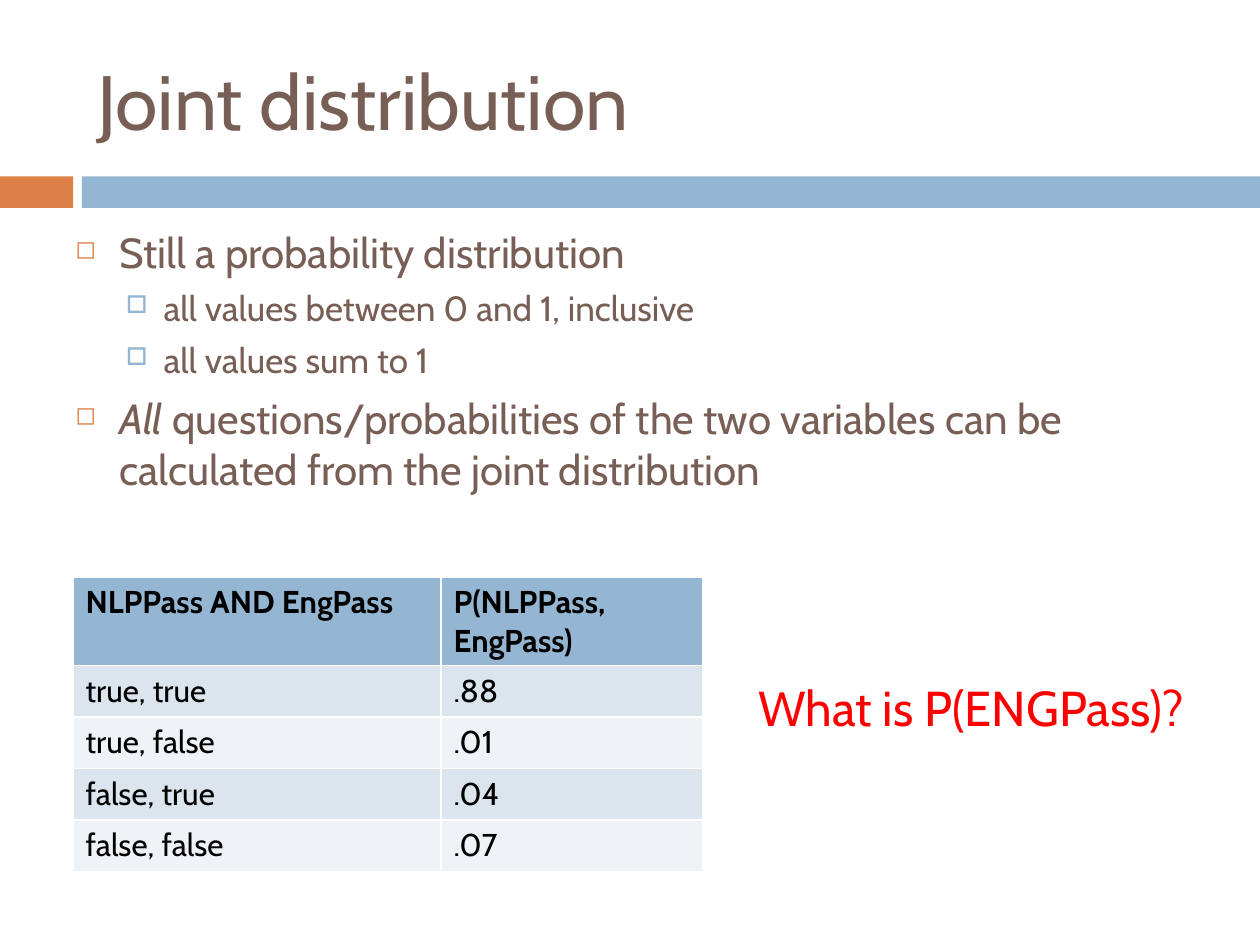
from lxml.etree import SubElement as Sub
from pptx import Presentation
from pptx.dml.color import RGBColor as RGB
from pptx.enum.shapes import MSO_SHAPE as Kind
from pptx.enum.text import MSO_ANCHOR as Anchor, PP_ALIGN as Align
from pptx.oxml.ns import qn
from pptx.util import Inches, Pt

HUE = {"brown": "775F55", "orange": "DD8047", "blue": "94B6D2", "red": "FF0000",
       "black": "000000", "dark": "DCE5EE", "light": "EEF3F7"}
FONT = "Cabin"
BAR = {"top": 1.4, "tall": 0.25}
# Per list level: text size, indent, hang, space before, bullet, its colour and size
LEVELS = [
    (24, 0.35, 0.35, 7, "◻", "orange", 60),
    (20, 0.7, 0.3, 5.5, "□", "blue", 70),
]
POINTS = [
    (0, [("Still a probability distribution", False)]),
    (1, [("all values between 0 and 1, inclusive", False)]),
    (1, [("all values sum to 1", False)]),
    (0, [("All", True),
         (" questions/probabilities of the two variables can be "
          "calculated from the joint distribution", False)]),
]
ROWS = [
    ("NLPPass AND EngPass", "P(NLPPass, EngPass)"),
    ("true, true", ".88"),
    ("true, false", ".01"),
    ("false, true", ".04"),
    ("false, false", ".07"),
]


def box(*nums):
    return [Inches(n) for n in nums]


def paint(fill, hue):
    fill.solid()
    fill.fore_color.rgb = RGB.from_string(HUE[hue])


def write(para, text, size=18, hue="brown", bold=False, italic=False):
    run = para.add_run()
    run.text = text
    font = run.font
    font.name, font.size = FONT, Pt(size)
    font.bold, font.italic = bold, italic
    font.color.rgb = RGB.from_string(HUE[hue])


def add_bar(slide, left, wide, hue):
    bar = slide.shapes.add_shape(
        Kind.RECTANGLE, *box(left, BAR["top"], wide, BAR["tall"]))
    bar.shadow.inherit = False
    paint(bar.fill, hue)
    bar.line.fill.background()


def add_title(slide, text):
    title = slide.shapes.title
    title.left, title.top, title.width, title.height = box(0.67, 0.25, 8.92, 1.08)
    frame = title.text_frame
    frame.vertical_anchor = Anchor.MIDDLE
    para = frame.paragraphs[0]
    para.alignment = Align.LEFT
    write(para, text, size=44)


def add_text(slide, *place):
    frame = slide.shapes.add_textbox(*box(*place)).text_frame
    frame.word_wrap = True
    return frame


def set_bullet(para, indent, hang, mark, hue, share):
    props = para._p.get_or_add_pPr()
    props.set("marL", str(Inches(indent)))
    props.set("indent", str(-Inches(hang)))
    tint = Sub(props, qn("a:buClr"))
    Sub(tint, qn("a:srgbClr"), val=HUE[hue])
    Sub(props, qn("a:buSzPct"), val=str(share * 1000))
    Sub(props, qn("a:buChar"), char=mark)


def add_list(slide, points):
    frame = add_text(slide, 0.5, 1.75, 9, 2.6)
    for num, (level, parts) in enumerate(points):
        para = frame.add_paragraph() if num else frame.paragraphs[0]
        size, indent, hang, gap, mark, hue, share = LEVELS[level]
        para.level = level
        para.space_before = Pt(gap)
        set_bullet(para, indent, hang, mark, hue, share)
        for text, italic in parts:
            write(para, text, size=size, italic=italic)


def add_grid(slide, rows):
    """Add the table; its default style draws the white rules."""
    wides = (2.92, 2.08)
    talls = [0.7] + [0.41] * (len(rows) - 1)
    grid = slide.shapes.add_table(
        len(rows), len(wides), *box(0.58, 4.58, sum(wides), sum(talls))).table
    for col, wide in zip(grid.columns, wides):
        col.width = Inches(wide)
    for num, (row, tall, texts) in enumerate(zip(grid.rows, talls, rows)):
        row.height = Inches(tall)
        hue = "blue" if num == 0 else "dark" if num % 2 else "light"
        for cell, text in zip(row.cells, texts):
            paint(cell.fill, hue)
            write(cell.text_frame.paragraphs[0], text, hue="black", bold=num == 0)


def main():
    deck = Presentation()
    deck.slide_width, deck.slide_height = box(10, 7.5)
    slide = deck.slides.add_slide(deck.slide_layouts[5])
    add_bar(slide, 0, 0.58, "orange")
    add_bar(slide, 0.65, 9.35, "blue")
    add_title(slide, "Joint distribution")
    add_list(slide, POINTS)
    add_grid(slide, ROWS)
    ask = add_text(slide, 5.92, 5.33, 4.25, 0.57)
    write(ask.paragraphs[0], "What is P(ENGPass)?", size=28, hue="red")
    deck.save("out.pptx")


if __name__ == "__main__":
    main()
